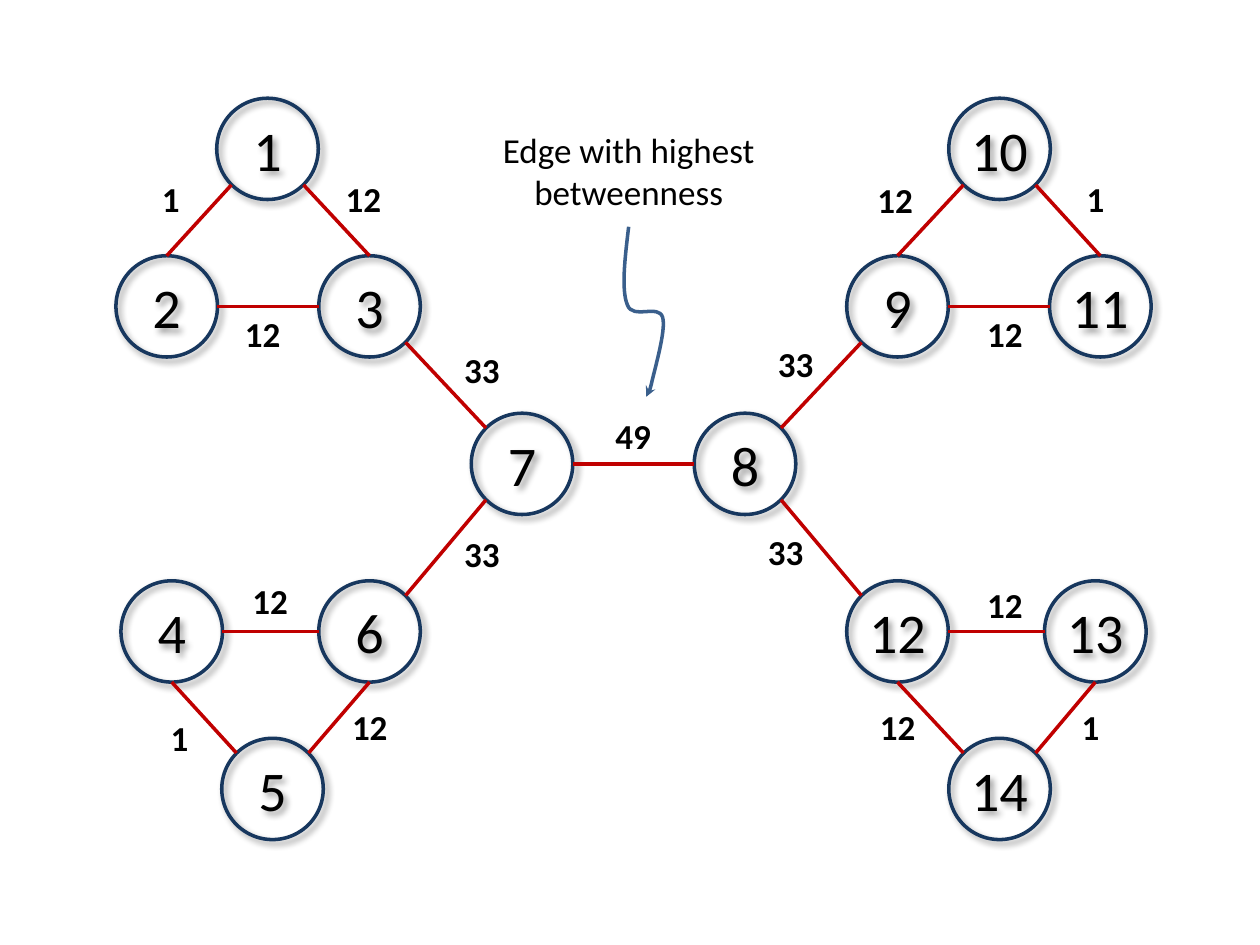
from typing import NamedTuple

from lxml import etree
from pptx import Presentation
from pptx.dml.color import RGBColor
from pptx.enum.shapes import MSO_CONNECTOR, MSO_SHAPE
from pptx.enum.text import MSO_ANCHOR, MSO_AUTO_SIZE, PP_ALIGN
from pptx.oxml.ns import qn
from pptx.util import Inches, Pt

CIRCLE = MSO_SHAPE.OVAL
STRAIGHT = MSO_CONNECTOR.STRAIGHT
CENTER = PP_ALIGN.CENTER
MIDDLE = MSO_ANCHOR.MIDDLE
FIT_TEXT = MSO_AUTO_SIZE.SHAPE_TO_FIT_TEXT

COLORS = {"ring": "17375E", "edge": "C00000", "pointer": "3A5F8C",
          "text": "000000", "shadow": "000000"}
FONT = "Calibri"

# Grid of 100 columns and 75 rows over the slide
COLUMNS, ROWS = 100, 75
CELL = Inches(10) // COLUMNS
NODE_WIDTH, NODE_HEIGHT = 8.06, 8.04
LABEL_WIDTH, LABEL_HEIGHT = 6.5, 4.4
LINE_WIDTH = Pt(2)

# Places on a circle, in radii from its centre
DIAGONAL = 0.71
SITES = {"n": (0, -1), "s": (0, 1), "w": (-1, 0), "e": (1, 0),
         "nw": (-DIAGONAL, -DIAGONAL), "ne": (DIAGONAL, -DIAGONAL),
         "sw": (-DIAGONAL, DIAGONAL), "se": (DIAGONAL, DIAGONAL)}


class Node(NamedTuple):
    column: float
    row: float


class Edge(NamedTuple):
    start: int
    start_site: str
    end: int
    end_site: str
    betweenness: int
    label_column: float
    label_row: float


TOP, UPPER, HUB, LOWER, BOTTOM = 7.8, 20.3, 32.8, 46.1, 58.6
NODES = {
    1: Node(17.2, TOP), 2: Node(9.2, UPPER), 3: Node(25.3, UPPER),
    4: Node(9.6, LOWER), 5: Node(17.6, BOTTOM), 6: Node(25.3, LOWER),
    7: Node(37.4, HUB), 8: Node(55.1, HUB),
    9: Node(67.2, UPPER), 10: Node(75.3, TOP), 11: Node(83.3, UPPER),
    12: Node(67.2, LOWER), 13: Node(82.9, LOWER), 14: Node(75.3, BOTTOM),
}
EDGES = [
    Edge(1, "sw", 2, "n", 1, 10.3, 13.6),
    Edge(3, "n", 1, "se", 12, 25.6, 13.6),
    Edge(3, "w", 2, "e", 12, 17.6, 24.3),
    Edge(10, "sw", 9, "n", 12, 67.8, 13.7),
    Edge(11, "n", 10, "se", 1, 83.7, 13.6),
    Edge(11, "w", 9, "e", 12, 76.5, 24.3),
    Edge(5, "nw", 4, "s", 1, 11, 56.4),
    Edge(6, "s", 5, "ne", 12, 26.1, 55.5),
    Edge(6, "w", 4, "e", 12, 18.2, 45.5),
    Edge(14, "nw", 12, "s", 12, 68, 55.5),
    Edge(13, "s", 14, "ne", 1, 83.3, 55.5),
    Edge(13, "w", 12, "e", 12, 76.5, 45.8),
    Edge(7, "nw", 3, "se", 33, 35, 27.2),
    Edge(7, "sw", 6, "ne", 33, 35, 41.8),
    Edge(8, "w", 7, "e", 49, 47, 32.4),
    Edge(8, "ne", 9, "sw", 33, 59.9, 26.7),
    Edge(12, "nw", 8, "se", 33, 59.1, 41.6),
]
# Start of the pointer, then three Bézier points for each curve
POINTER = [(51.3, 31.5),
           (51.3, 31.6), (51.4, 31.6), (51.7, 30.5),
           (51.9, 29.5), (52.9, 26.2), (52.6, 25.2),
           (52.3, 24.1), (50.2, 25.4), (49.8, 24.2),
           (49.3, 23), (49.6, 20.5), (49.9, 18)]


def cells(*lengths: float) -> list[int]:
    return [round(length * CELL) for length in lengths]


def color(name: str) -> RGBColor:
    return RGBColor.from_string(COLORS[name])


def style_line(shape, name: str) -> None:
    shape.line.color.rgb = color(name)
    shape.line.width = LINE_WIDTH


def write(frame, text: str, size: int, bold: bool = False) -> None:
    frame.word_wrap = True
    frame.text = text
    paragraph = frame.paragraphs[0]
    paragraph.alignment = CENTER
    font = paragraph.runs[0].font
    font.name, font.size, font.bold = FONT, Pt(size), bold
    font.color.rgb = color("text")


def add_shadow(shape) -> None:
    shape.shadow.inherit = False
    effects = shape._element.spPr.find(qn("a:effectLst"))
    outer = etree.SubElement(effects, qn("a:outerShdw"), blurRad=str(Pt(4)),
                             dist=str(Pt(3)), dir="2700000", algn="tl",
                             rotWithShape="0")
    tint = etree.SubElement(outer, qn("a:srgbClr"), val=COLORS["shadow"])
    etree.SubElement(tint, qn("a:alpha"), val="40000")


def add_node(slide, number: int, node: Node) -> None:
    circle = slide.shapes.add_shape(
        CIRCLE, *cells(node.column, node.row, NODE_WIDTH, NODE_HEIGHT))
    circle.fill.background()
    style_line(circle, "ring")
    add_shadow(circle)
    frame = circle.text_frame
    write(frame, str(number), 32)
    frame.vertical_anchor = MIDDLE
    if number > 9:
        frame.margin_left = frame.margin_right = 0


def site(number: int, name: str) -> list[int]:
    node, (across, down) = NODES[number], SITES[name]
    return cells(node.column + NODE_WIDTH / 2 * (1 + across),
                 node.row + NODE_HEIGHT / 2 * (1 + down))


def add_edge(slide, edge: Edge) -> None:
    line = slide.shapes.add_connector(
        STRAIGHT, *site(edge.start, edge.start_site),
        *site(edge.end, edge.end_site))
    style_line(line, "edge")
    etree.SubElement(line._element.spPr, qn("a:effectLst"))


def add_label(slide, text: str, column: float, row: float, width: float,
              height: float, bold: bool) -> None:
    label = slide.shapes.add_textbox(*cells(column, row, width, height))
    write(label.text_frame, text, 20, bold)
    label.text_frame.auto_size = FIT_TEXT


def add_pointer(slide) -> None:
    points = [tuple(cells(*point)) for point in POINTER]
    builder = slide.shapes.build_freeform(*points[0])
    builder.add_line_segments(points[1:], close=False)
    pointer = builder.convert_to_shape()
    pointer.fill.background()
    pointer.shadow.inherit = False
    style_line(pointer, "pointer")
    # Turn each three straight segments into one Bézier curve
    outline = next(pointer._element.iter(qn("a:path")))
    segments = outline.findall(qn("a:lnTo"))
    for first in range(0, len(segments), 3):
        curve = etree.SubElement(outline, qn("a:cubicBezTo"))
        for segment in segments[first:first + 3]:
            curve.append(segment[0])
            outline.remove(segment)
    line = pointer._element.spPr.find(qn("a:ln"))
    etree.SubElement(line, qn("a:headEnd"), type="stealth")


def main() -> None:
    deck = Presentation()
    deck.slide_width, deck.slide_height = COLUMNS * CELL, ROWS * CELL
    slide = deck.slides.add_slide(deck.slide_layouts[6])

    # Network
    for number, node in NODES.items():
        add_node(slide, number, node)
    for edge in EDGES:
        add_edge(slide, edge)

    # Betweenness values and the remark on the highest one
    add_label(slide, "Edge with highest betweenness", 34, 9.7, 31.8, 7.7, False)
    for edge in EDGES:
        add_label(slide, str(edge.betweenness), edge.label_column,
                  edge.label_row, LABEL_WIDTH, LABEL_HEIGHT, True)
    add_pointer(slide)

    deck.save("out.pptx")


if __name__ == "__main__":
    main()
